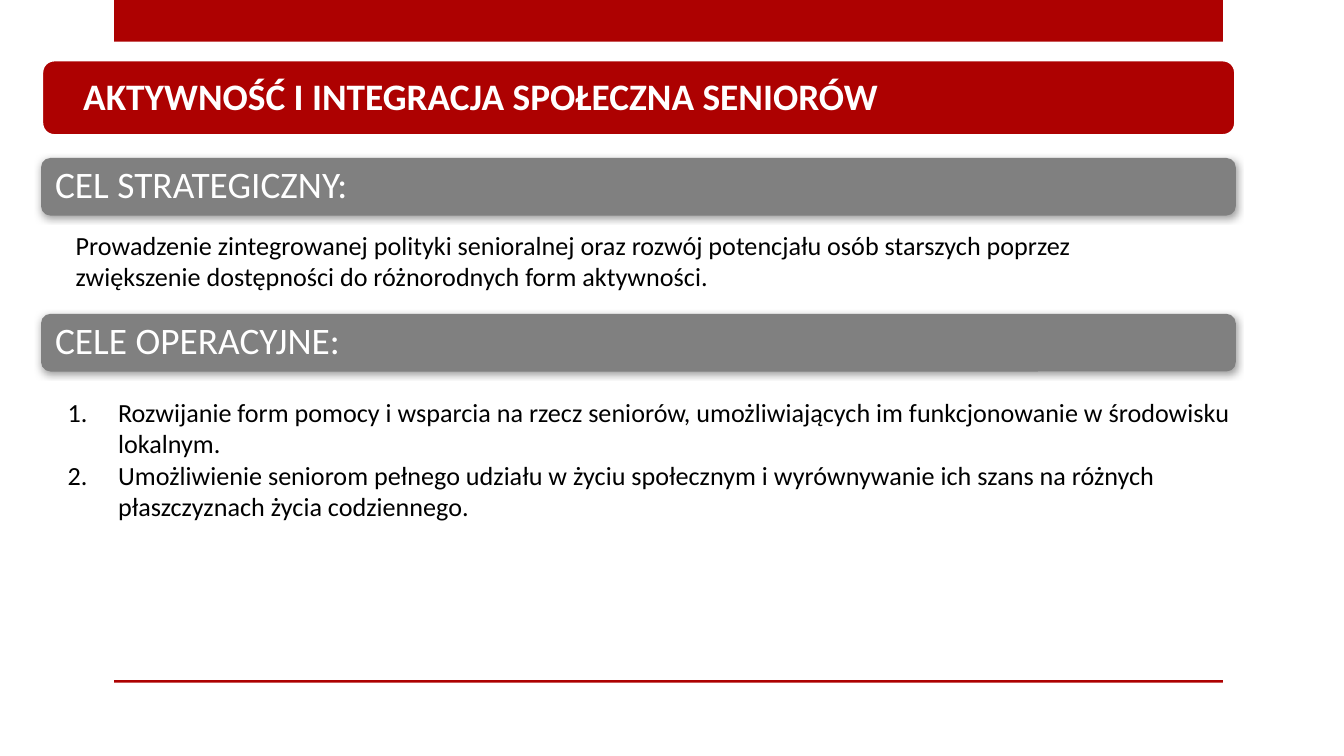
from typing import NamedTuple

from lxml.etree import SubElement
from pptx import Presentation
from pptx.dml.color import RGBColor
from pptx.enum.shapes import MSO_SHAPE
from pptx.enum.text import MSO_ANCHOR, MSO_AUTO_SIZE
from pptx.oxml.ns import qn
from pptx.shapes.autoshape import Shape
from pptx.slide import Slide
from pptx.util import Emu, Pt

PX = 4572  # 200 px to the inch
SLIDE_WIDTH, SLIDE_HEIGHT = 2000, 1125
RED = RGBColor(0xAD, 0x01, 0x01)
GREY = RGBColor(0x80, 0x80, 0x80)
WHITE = RGBColor(0xFF, 0xFF, 0xFF)
BLACK = RGBColor(0, 0, 0)
FONT = "Calibri"


class Box(NamedTuple):
    left: int
    top: int
    width: int
    height: int

    def emu(self) -> list[Emu]:
        return [Emu(length * PX) for length in self]


class Section(NamedTuple):
    heading: str
    top: int
    body: Box
    paragraphs: list[str]
    numbered: bool = False


RULES = [Box(170, 0, 1650, 62), Box(170, 1012, 1650, 4)]
TITLE_BAR = Box(62, 89, 1777, 113)
TITLE = "AKTYWNOŚĆ I INTEGRACJA SPOŁECZNA SENIORÓW"
SECTIONS = [
    Section("CEL STRATEGICZNY:", 235, Box(93, 331, 1714, 114), [
        "Prowadzenie zintegrowanej polityki senioralnej oraz rozwój potencjału osób "
        "starszych poprzez zwiększenie dostępności do różnorodnych form aktywności.",
    ]),
    Section("CELE OPERACYJNE:", 467, Box(81, 580, 1830, 208), [
        "Rozwijanie form pomocy i wsparcia na rzecz seniorów, umożliwiających im "
        "funkcjonowanie w środowisku lokalnym.",
        "Umożliwienie seniorom pełnego udziału w życiu społecznym i wyrównywanie "
        "ich szans na różnych płaszczyznach życia codziennego.",
    ], numbered=True),
]


def add_bar(slide: Slide, box: Box, fill: RGBColor,
            kind: MSO_SHAPE = MSO_SHAPE.ROUNDED_RECTANGLE) -> Shape:
    bar = slide.shapes.add_shape(kind, *box.emu())
    bar.shadow.inherit = False
    bar.fill.solid()
    bar.fill.fore_color.rgb = fill
    bar.line.fill.background()
    return bar


def add_soft_shadow(bar: Shape) -> None:
    effects = bar._element.spPr.find(qn("a:effectLst"))
    shadow = SubElement(effects, qn("a:outerShdw"), blurRad="50800", dist="12700",
                        dir="5280000", algn="tl", rotWithShape="0")
    color = SubElement(shadow, qn("a:srgbClr"), val=str(BLACK))
    SubElement(color, qn("a:alpha"), val="40000")


def add_text(slide: Slide, box: Box, paragraphs: list[str], *, size: int = 14,
             color: RGBColor = BLACK, bold: bool = False, wrap: bool = True,
             grow: bool = True, inset: int | None = None,
             line_spacing: float | None = None, numbered: bool = False) -> None:
    frame = slide.shapes.add_textbox(*box.emu()).text_frame
    frame.word_wrap = wrap
    frame.auto_size = MSO_AUTO_SIZE.SHAPE_TO_FIT_TEXT if grow else MSO_AUTO_SIZE.NONE
    if inset is not None:
        frame.margin_left = frame.margin_right = Emu(inset * PX)
        frame.margin_top = frame.margin_bottom = Emu(inset * PX)
        frame.vertical_anchor = MSO_ANCHOR.MIDDLE
    for index, text in enumerate(paragraphs):
        paragraph = frame.paragraphs[0] if index == 0 else frame.add_paragraph()
        if line_spacing:
            paragraph.line_spacing = line_spacing
        if numbered:
            props = paragraph._p.get_or_add_pPr()
            props.set("marL", str(75 * PX))
            props.set("indent", str(-75 * PX))
            SubElement(props, qn("a:buFont"), typeface="+mj-lt")
            SubElement(props, qn("a:buAutoNum"), type="arabicPeriod")
        run = paragraph.add_run()
        run.text = text
        run.font.name = FONT
        run.font.size = Pt(size)
        run.font.bold = bold
        run.font.color.rgb = color


def add_section(slide: Slide, section: Section) -> None:
    add_soft_shadow(add_bar(slide, Box(61, section.top, 1778, 86), GREY))
    add_text(slide, Box(66, section.top + 4, 1768, 78), [section.heading], size=20,
             color=WHITE, grow=False, inset=16, line_spacing=0.9)
    add_text(slide, section.body, section.paragraphs, numbered=section.numbered)


def main() -> None:
    deck = Presentation()
    deck.slide_width = Emu(SLIDE_WIDTH * PX)
    deck.slide_height = Emu(SLIDE_HEIGHT * PX)
    slide = deck.slides.add_slide(deck.slide_layouts[6])
    for rule in RULES:
        add_bar(slide, rule, RED, MSO_SHAPE.RECTANGLE)
    for section in SECTIONS:
        add_section(slide, section)
    title_bar = add_bar(slide, TITLE_BAR, RED)
    title_bar.line.color.rgb = WHITE
    title_bar.line.width = Pt(1.75)
    add_text(slide, Box(104, 99, 1238, 88), [TITLE], size=20, color=WHITE,
             bold=True, wrap=False)
    deck.save("out.pptx")


if __name__ == "__main__":
    main()
